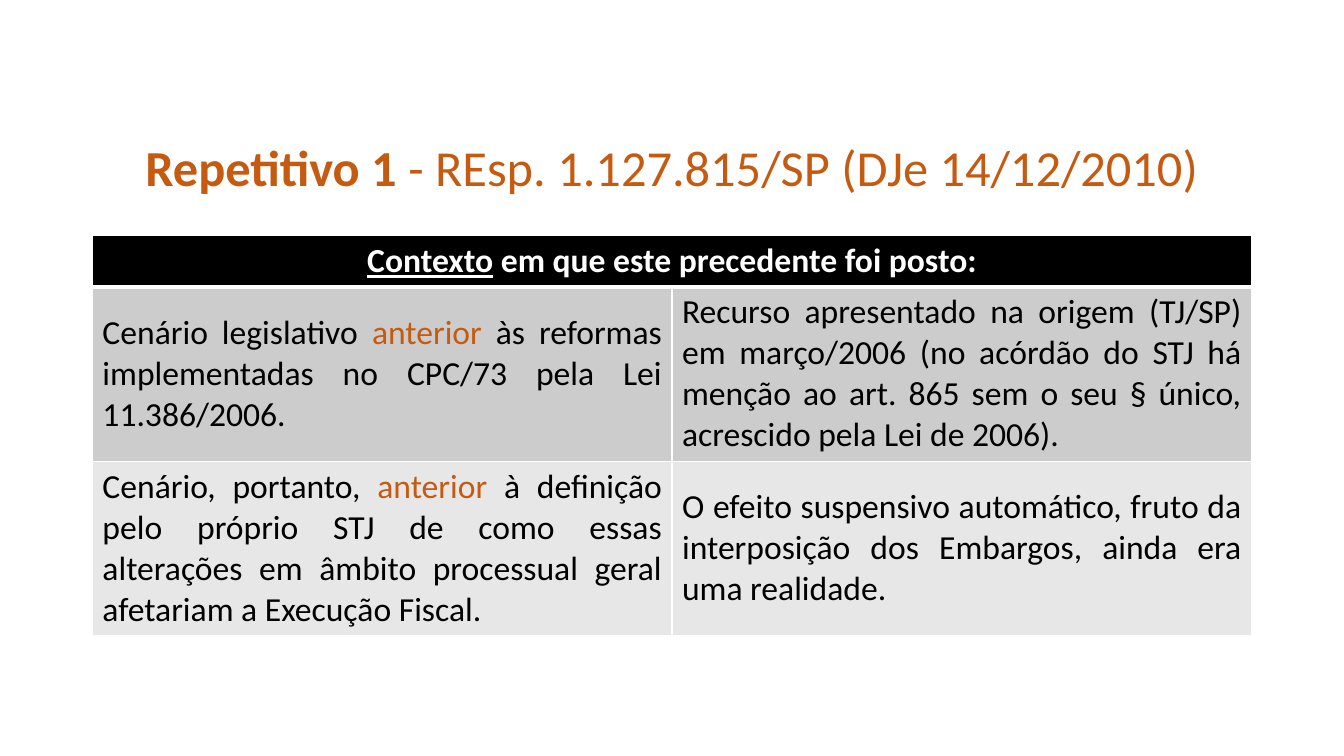
from dataclasses import dataclass

from lxml import etree
from pptx import Presentation, util as u
from pptx.dml import color
from pptx.enum import shapes, text
from pptx.oxml import ns


@dataclass(frozen=True)
class Theme:
    font: str = "Calibri"
    title_size: int = 36
    table_size: int = 24
    accent: str = "C55A11"
    ink: str = "000000"
    paper: str = "FFFFFF"
    bands: tuple = ("CCCCCC", "E7E7E7")
    thin: int = 1
    thick: int = 3


@dataclass(frozen=True)
class Run:
    words: str
    color: str
    bold: bool = False
    underline: bool = False


def paint(fill, value):
    fill.solid()
    fill.fore_color.rgb = color.RGBColor.from_string(value)


class SlideBuilder:
    COLUMNS, ROWS = 16, 15

    def __init__(self, presentation, theme):
        self.theme = theme
        self.slide = presentation.slides.add_slide(presentation.slide_layouts[6])
        self.column = presentation.slide_width / self.COLUMNS
        self.row = presentation.slide_height / self.ROWS

    def place(self, left, top, width, height):
        return (round(left * self.column), round(top * self.row),
                round(width * self.column), round(height * self.row))

    def set_text(self, paragraph, runs, size, alignment):
        paragraph.alignment = alignment
        paragraph.font.name = self.theme.font
        paragraph.font.size = u.Pt(size)
        for part in runs:
            run = paragraph.add_run()
            run.text = part.words
            run.font.color.rgb = color.RGBColor.from_string(part.color)
            run.font.bold = part.bold
            run.font.underline = part.underline

    def panel(self, area, runs, opacity):
        shape = self.slide.shapes.add_shape(shapes.MSO_SHAPE.RECTANGLE, *self.place(*area))
        shape.shadow.inherit = False
        shape.line.fill.background()
        paint(shape.fill, self.theme.paper)
        tint = shape.element.spPr.find(ns.qn("a:solidFill")).find(ns.qn("a:srgbClr"))
        etree.SubElement(tint, ns.qn("a:alpha"), val=str(opacity * 1000))
        frame = shape.text_frame
        frame.word_wrap = True
        frame.vertical_anchor = text.MSO_ANCHOR.TOP
        paragraph = frame.paragraphs[0]
        paragraph.line_spacing = 0.9
        self.set_text(paragraph, runs, self.theme.title_size, text.PP_ALIGN.CENTER)

    def style_cell(self, cell, fill, top, bottom):
        properties = cell._tc.get_or_add_tcPr()
        widths = {"L": self.theme.thin, "R": self.theme.thin, "T": top, "B": bottom}
        for side, width in widths.items():
            line = etree.SubElement(properties, ns.qn(f"a:ln{side}"), w=str(int(u.Pt(width))))
            solid = etree.SubElement(line, ns.qn("a:solidFill"))
            etree.SubElement(solid, ns.qn("a:srgbClr"), val=self.theme.paper)
        paint(cell.fill, fill)
        cell.vertical_anchor = text.MSO_ANCHOR.MIDDLE

    def table(self, area, heights, header, body):
        theme = self.theme
        frame = self.slide.shapes.add_table(len(heights), len(body[0]), *self.place(*area))
        table = frame.table
        for row, height in zip(table.rows, heights):
            row.height = round(height * self.row)
        for cell in table.rows[0].cells:
            self.style_cell(cell, theme.ink, theme.thin, theme.thick)
        table.cell(0, 0).merge(table.cell(0, len(body[0]) - 1))
        self.set_text(table.cell(0, 0).text_frame.paragraphs[0], header,
                      theme.table_size, text.PP_ALIGN.CENTER)
        for index, (contents, band) in enumerate(zip(body, theme.bands), start=1):
            top = theme.thick if index == 1 else theme.thin
            for cell, runs in zip(table.rows[index].cells, contents):
                self.style_cell(cell, band, top, theme.thin)
                self.set_text(cell.text_frame.paragraphs[0], runs,
                              theme.table_size, text.PP_ALIGN.JUSTIFY)


def main():
    presentation = Presentation()
    presentation.slide_width = u.Inches(13.33)
    presentation.slide_height = u.Inches(7.5)
    theme = Theme()
    builder = SlideBuilder(presentation, theme)
    earlier = Run("anterior", theme.accent)

    builder.panel((1.1, 2.74, 13.8, 9.52), [
        Run("Repetitivo 1", theme.accent, bold=True),
        Run(" - REsp. 1.127.815/SP (DJe 14/12/2010)", theme.accent),
    ], opacity=7)

    header = [
        Run("Contexto", theme.paper, bold=True, underline=True),
        Run(" em que este precedente foi posto:", theme.paper, bold=True),
    ]
    body = [
        [
            [Run("Cenário legislativo ", theme.ink), earlier,
             Run(" às reformas implementadas no CPC/73 pela Lei 11.386/2006.", theme.ink)],
            [Run("Recurso apresentado na origem (TJ/SP) em março/2006 (no acórdão do STJ "
                 "há menção ao art. 865 sem o seu § único, acrescido pela Lei de 2006).",
                 theme.ink)],
        ],
        [
            [Run("Cenário, portanto, ", theme.ink), earlier,
             Run(" à definição pelo próprio STJ de como essas alterações em âmbito "
                 "processual geral afetariam a Execução Fiscal.", theme.ink)],
            [Run("O efeito suspensivo automático, fruto da interposição dos Embargos, "
                 "ainda era uma realidade.", theme.ink)],
        ],
    ]
    heights = (1, 3.44, 3.44)
    builder.table((1.1, 4.68, 13.8, sum(heights)), heights, header, body)
    presentation.save("out.pptx")


if __name__ == "__main__":
    main()
